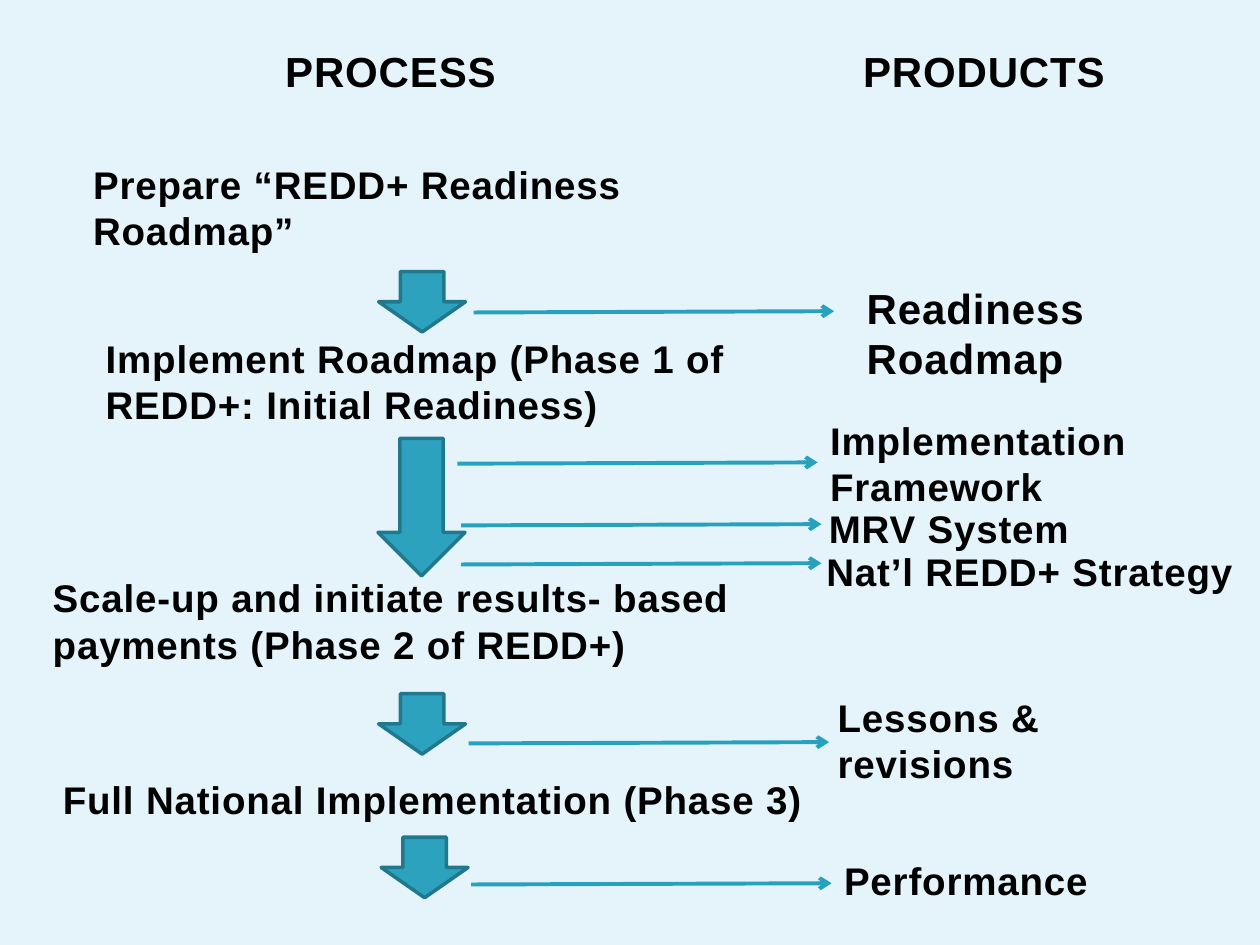
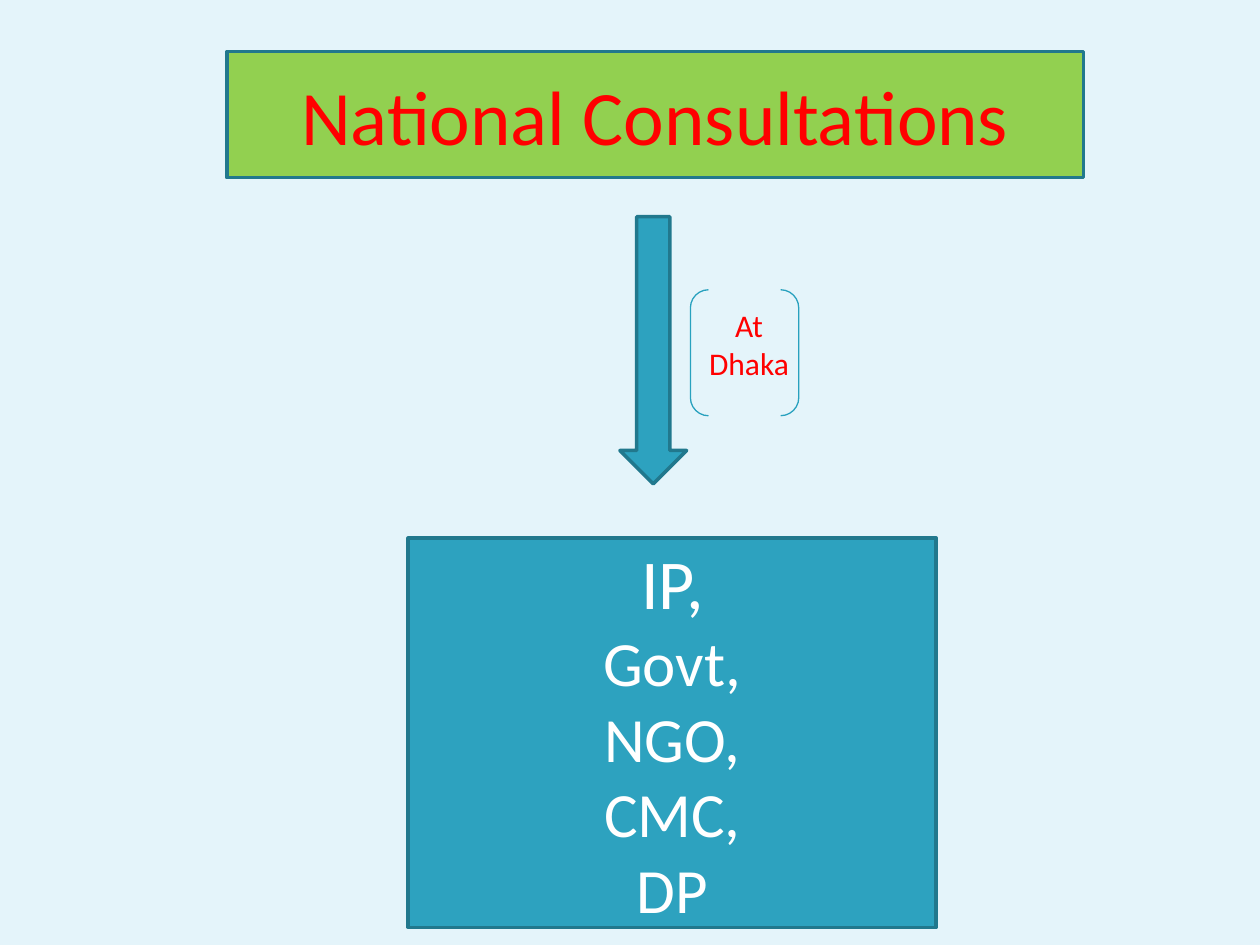
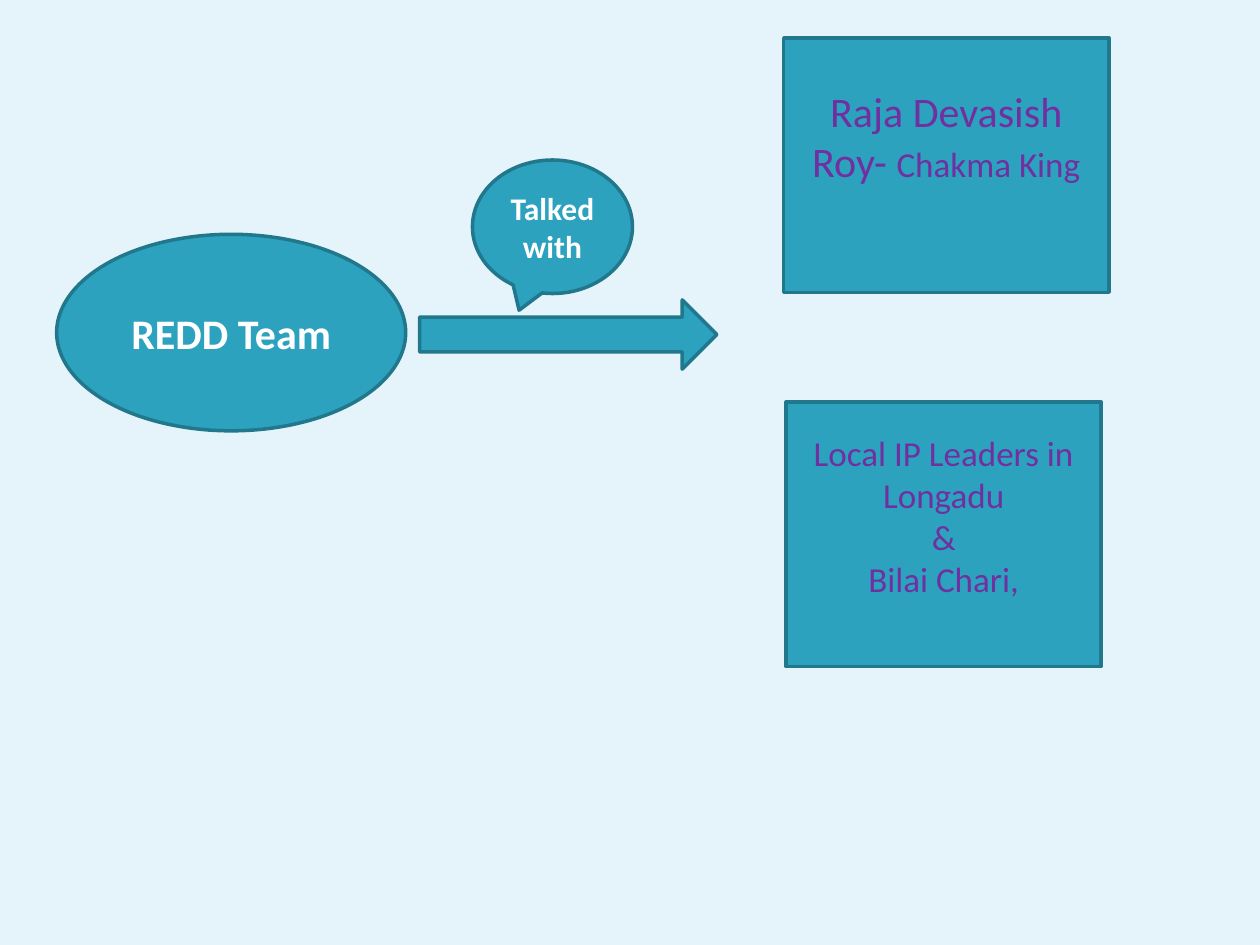
from lxml.etree import SubElement
from pptx import Presentation
from pptx.dml.color import RGBColor
from pptx.enum.shapes import MSO_CONNECTOR, MSO_SHAPE
from pptx.enum.text import MSO_ANCHOR, MSO_AUTO_SIZE, PP_ALIGN
from pptx.oxml.ns import qn
from pptx.util import Inches, Pt

HUES = {
    "back": "E4F4FA", "teal": "2DA2BF", "edge": "21788D", "line": "28A1BE",
    "lime": "92D050", "red": "FF0000", "plum": "7030A0",
    "white": "FFFFFF", "black": "000000",
}
HUE = {name: RGBColor.from_string(code) for name, code in HUES.items()}


def draw(slide, kind, box, turn=0):
    """Add a teal preset shape with a dark edge."""
    shape = slide.shapes.add_shape(kind, *[Inches(n) for n in box])
    shape.shadow.inherit = False
    shape.rotation = turn
    shape.fill.solid()
    shape.fill.fore_color.rgb = HUE["teal"]
    shape.line.color.rgb = HUE["edge"]
    shape.line.width = Pt(2)
    return shape


def write(frame, paras, hue, font="Calibri", bold=False, align=PP_ALIGN.CENTER, space=0):
    """Fill a frame; each paragraph is a list of (text, size) runs."""
    frame.word_wrap = True
    for i, runs in enumerate(paras):
        para = frame.paragraphs[0] if i == 0 else frame.add_paragraph()
        para.alignment = align
        for text, size in runs:
            run = para.add_run()
            run.text = text
            run.font.name = font
            run.font.size = Pt(size)
            run.font.bold = bold
            run.font.color.rgb = HUE[hue]
            if space:
                run.font._element.set("spc", str(space))


# Deck and shared background
deck = Presentation()
deck.slide_width, deck.slide_height = Inches(10), Inches(7.5)
back = deck.slide_master.background.fill
back.solid()
back.fore_color.rgb = HUE["back"]
plain, titled = deck.slide_layouts[6], deck.slide_layouts[5]

# Slide 1: process steps and their products
slide = deck.slides.add_slide(plain)
left, mid = PP_ALIGN.LEFT, PP_ALIGN.CENTER
labels = [
    ("PROCESS", 24, mid, (0.85, 0.31, 4.5, 0.5)),
    ("PRODUCTS", 24, mid, (5.96, 0.31, 3.7, 0.5)),
    ("Prepare “REDD+ Readiness Roadmap”", 22, left, (0.64, 1.23, 5.41, 0.84)),
    ("Implement Roadmap (Phase 1 of REDD+: Initial Readiness)", 22, left,
     (0.74, 2.61, 5.22, 0.84)),
    ("Scale-up and initiate results- based payments (Phase 2 of REDD+)", 22, left,
     (0.32, 4.51, 6.06, 0.84)),
    ("Full National Implementation (Phase 3)", 22, left, (0.4, 6.11, 6.1, 0.47)),
    ("Readiness Roadmap", 24, left, (6.78, 2.19, 2.48, 0.91)),
    ("Implementation Framework", 22, left, (6.49, 3.26, 2.6, 0.84)),
    ("MRV System", 22, left, (6.48, 3.96, 2.48, 0.47)),
    ("Nat’l REDD+ Strategy", 22, left, (6.46, 4.3, 3.54, 0.47)),
    ("Lessons & revisions", 22, left, (6.55, 5.46, 3.13, 0.84)),
    ("Performance", 22, left, (6.6, 6.75, 2.48, 0.47)),
]
for text, size, align, box in labels:
    label = slide.shapes.add_textbox(*[Inches(n) for n in box])
    write(label.text_frame, [[(text, size)]], "black", "Arial", True, align, 50)
    label.text_frame.auto_size = MSO_AUTO_SIZE.SHAPE_TO_FIT_TEXT

# Block arrows between steps, turned to point down
for x, y, length in [(3.11, 2.05, 0.48), (2.8, 3.68, 1.09), (3.11, 5.4, 0.48), (3.13, 6.54, 0.48)]:
    draw(slide, MSO_SHAPE.RIGHT_ARROW, (x, y, length, 0.69), 90)

# Thin arrows from steps to products
starts = [(3.76, 2.48), (3.63, 3.68), (3.66, 4.17), (3.66, 4.48), (3.72, 5.9), (3.74, 7.02)]
for x, y in starts:
    link = slide.shapes.add_connector(
        MSO_CONNECTOR.STRAIGHT, Inches(x), Inches(y), Inches(x + 2.86), Inches(y - 0.01))
    link.line.color.rgb = HUE["line"]
    link.line.width = Pt(2.25)
    SubElement(link.line._get_or_add_ln(), qn("a:tailEnd"), type="arrow")
    SubElement(link._element.spPr, qn("a:effectLst"))

# Slide 2: national consultations
slide = deck.slides.add_slide(titled)
title = slide.shapes.title
title.left, title.top, title.width, title.height = [Inches(n) for n in (1.8, 0.41, 6.8, 1)]
title.fill.solid()
title.fill.fore_color.rgb = HUE["lime"]
title.line.color.rgb = HUE["edge"]
title.line.width = Pt(2)
title.text_frame.vertical_anchor = MSO_ANCHOR.MIDDLE
write(title.text_frame, [[("National Consultations", 44)]], "red")

group = draw(slide, MSO_SHAPE.RECTANGLE, (3.24, 4.27, 4.19, 3.09))
names = [[("IP,", 40)]] + [[(name, 36)] for name in ("Govt,", "NGO,", "CMC,", "DP")]
write(group.text_frame, names, "white")
draw(slide, MSO_SHAPE.DOWN_ARROW, (4.92, 1.72, 0.53, 2.12))

# Place in brackets
bracket = draw(slide, MSO_SHAPE.DOUBLE_BRACKET, (5.48, 2.3, 0.86, 1))
bracket.fill.background()
bracket.line.color.rgb = HUE["line"]
bracket.line.width = Pt(0.75)
place = slide.shapes.add_textbox(Inches(5.46), Inches(2.38), Inches(0.97), Inches(0.71))
write(place.text_frame, [[("At Dhaka", 18)]], "red")
place.text_frame.auto_size = MSO_AUTO_SIZE.SHAPE_TO_FIT_TEXT

# Slide 3: talks with leaders
slide = deck.slides.add_slide(plain)
team = draw(slide, MSO_SHAPE.OVAL, (0.45, 1.86, 2.77, 1.56))
write(team.text_frame, [[("REDD Team", 24)]], "white", bold=True)
talk = draw(slide, MSO_SHAPE.OVAL_CALLOUT, (3.75, 1.27, 1.27, 1.06))
write(talk.text_frame, [[("Talked with", 18)]], "white", bold=True)
draw(slide, MSO_SHAPE.RIGHT_ARROW, (3.33, 2.38, 2.36, 0.55))

leaders = [
    ((6.22, 0.3, 2.58, 2.02), 0.52, [[("Raja Devasish Roy- ", 24), ("Chakma King", 20)]]),
    ((6.24, 3.19, 2.5, 2.1), 0.35,
     [[("Local IP Leaders in Longadu", 20)], [("&", 20)], [("Bilai Chari,", 20)]]),
]
for box, inset, paras in leaders:
    card = draw(slide, MSO_SHAPE.RECTANGLE, box)
    card.text_frame.margin_bottom = Inches(inset)
    write(card.text_frame, paras, "plum")

deck.save("out.pptx")
